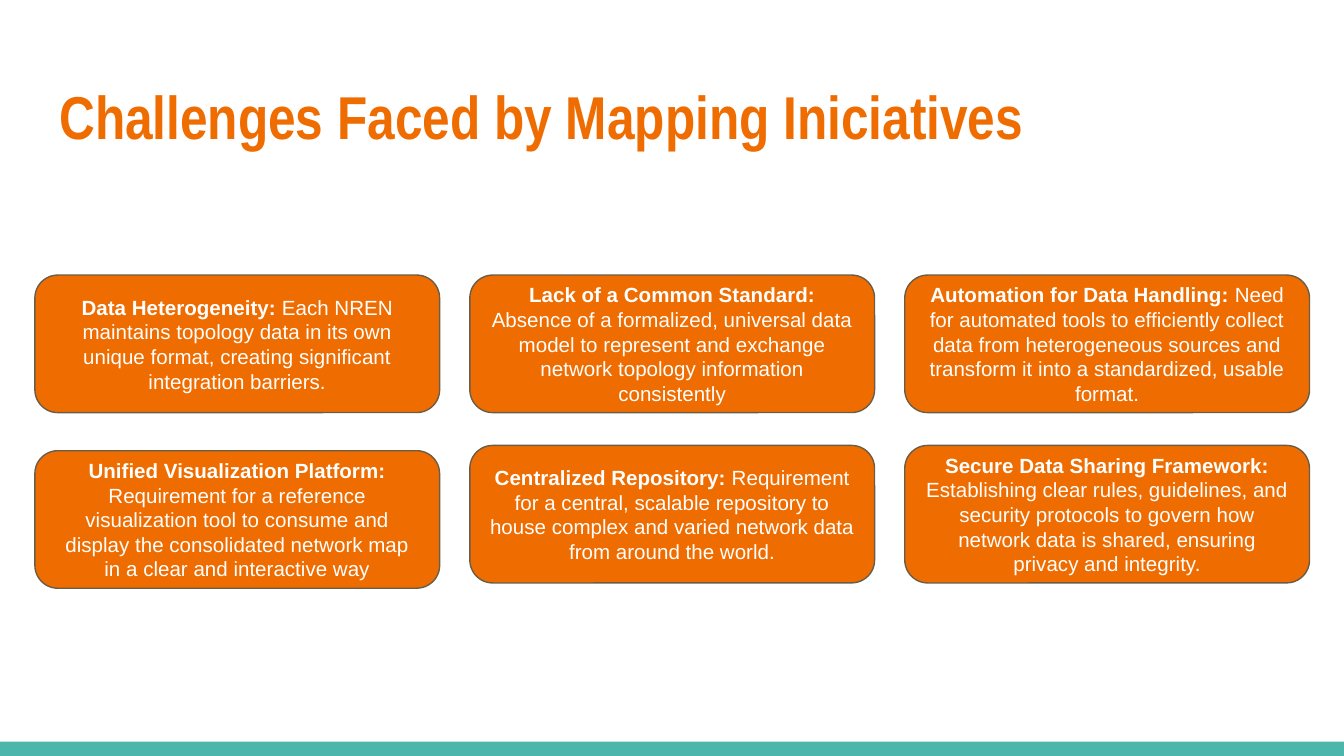
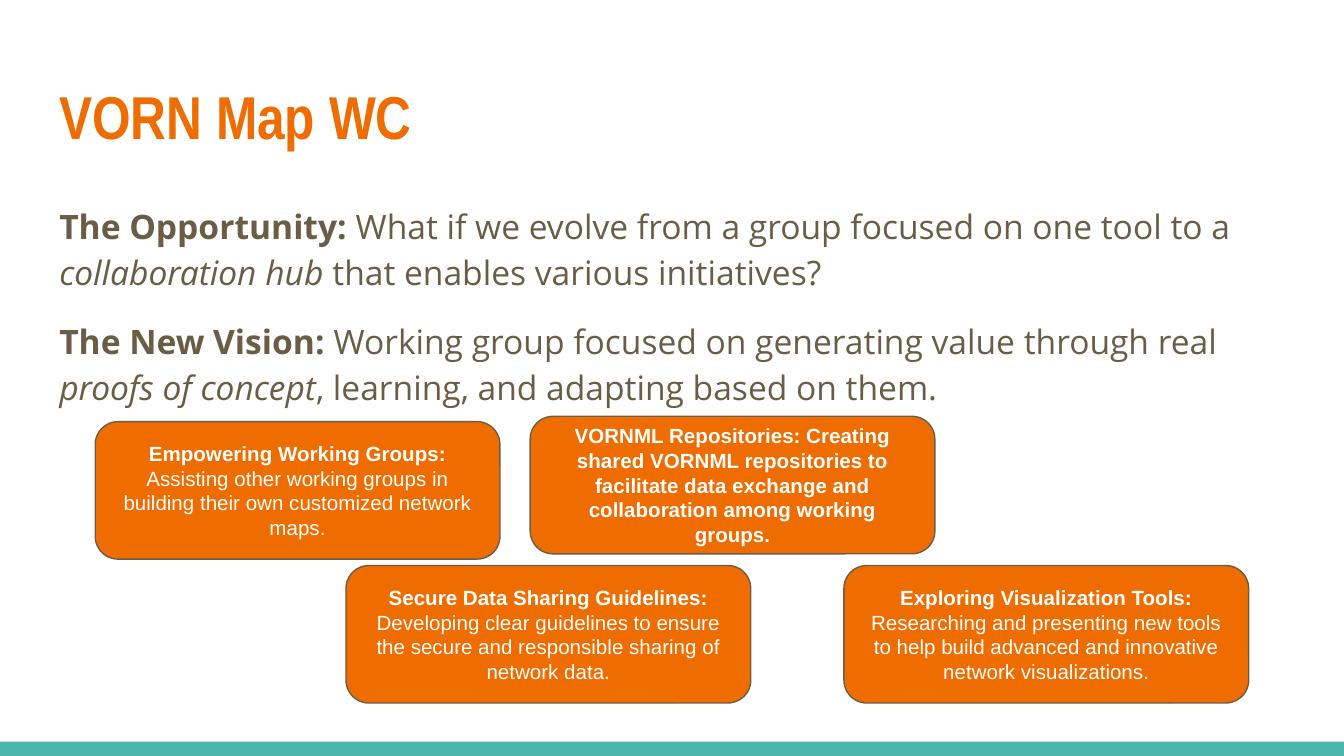
from typing import NamedTuple

from pptx import Presentation
from pptx.dml.color import RGBColor
from pptx.enum.shapes import MSO_SHAPE
from pptx.enum.text import MSO_ANCHOR, MSO_AUTO_SIZE, PP_ALIGN
from pptx.oxml.ns import qn
from pptx.util import Cm, Pt

ORANGE = RGBColor(0xEF, 0x6C, 0x00)
TEAL = RGBColor(0x4D, 0xB6, 0xAC)
BROWN = RGBColor(0x69, 0x5D, 0x46)
WHITE = RGBColor(0xFF, 0xFF, 0xFF)

TITLE_FONT = "Arial Narrow"
BODY_FONT = "Open Sans"
CARD_FONT = "Arial"

RECTANGLE = MSO_SHAPE.RECTANGLE
ROUNDED = MSO_SHAPE.ROUNDED_RECTANGLE
TOP = MSO_ANCHOR.TOP
MIDDLE = MSO_ANCHOR.MIDDLE
LEFT = PP_ALIGN.LEFT
CENTER = PP_ALIGN.CENTER
NO_AUTOFIT = MSO_AUTO_SIZE.NONE

SLIDE_WIDTH, SLIDE_HEIGHT = Cm(25.4), Cm(14.29)
BAND_HEIGHT = Cm(0.27)
INSET = Cm(0.25)
TEXT_LEFT, TEXT_WIDTH = Cm(0.87), Cm(23.67)
CARD_WIDTH, CARD_HEIGHT = Cm(7.65), Cm(2.6)
COLUMN_STEP = 8.22

TITLE_ONLY_LAYOUT = 5
TITLE_AND_BODY_LAYOUT = 1


class Run(NamedTuple):
    text: str
    bold: bool = False
    italic: bool = False


class Card(NamedTuple):
    """A rounded box; left and top are in centimetres."""
    left: float
    top: float
    heading: str
    detail: str = ""


CHALLENGE_LEFT = 0.66
CHALLENGE_ROWS = (5.2, 8.42)
LOWERED_TOP = 8.52
CHALLENGE_COLUMNS = [CHALLENGE_LEFT + COLUMN_STEP * column for column in range(3)]

CHALLENGES = [
    Card(CHALLENGE_COLUMNS[0], CHALLENGE_ROWS[0], "Data Heterogeneity:",
         " Each NREN maintains topology data in its own unique format, "
         "creating significant integration barriers."),
    Card(CHALLENGE_COLUMNS[1], CHALLENGE_ROWS[0], "Lack of a Common Standard:",
         " Absence of a formalized, universal data model to represent and "
         "exchange network topology information consistently"),
    Card(CHALLENGE_COLUMNS[2], CHALLENGE_ROWS[0], "Automation for Data Handling:",
         " Need for automated tools to efficiently collect data from heterogeneous "
         "sources and transform it into a standardized, usable format."),
    Card(CHALLENGE_COLUMNS[0], LOWERED_TOP, "Unified Visualization Platform:",
         " Requirement for a reference visualization tool to consume and display "
         "the consolidated network map in a clear and interactive way"),
    Card(CHALLENGE_COLUMNS[1], CHALLENGE_ROWS[1], "Centralized Repository:",
         " Requirement for a central, scalable repository to house complex and "
         "varied network data from around the world."),
    Card(CHALLENGE_COLUMNS[2], CHALLENGE_ROWS[1], "Secure Data Sharing Framework:",
         " Establishing clear rules, guidelines, and security protocols to govern "
         "how network data is shared, ensuring privacy and integrity."),
]

INITIATIVE_LEFT = 1.8
INITIATIVE_BOTTOM_ROW = 10.69

INITIATIVES = [
    Card(INITIATIVE_LEFT, 7.97, "Empowering Working Groups:",
         " Assisting other working groups in building their own customized "
         "network maps."),
    Card(INITIATIVE_LEFT + COLUMN_STEP, 7.87,
         "VORNML Repositories: Creating shared VORNML repositories to facilitate "
         "data exchange and collaboration among working groups."),
    Card(6.54, INITIATIVE_BOTTOM_ROW, "Secure Data Sharing Guidelines:",
         " Developing clear guidelines to ensure the secure and responsible "
         "sharing of network data."),
    Card(15.95, INITIATIVE_BOTTOM_ROW, "Exploring Visualization Tools:",
         " Researching and presenting new tools to help build advanced and "
         "innovative network visualizations."),
]

VISION = [
    [
        Run("The Opportunity:", bold=True),
        Run(" What if we evolve from a group focused on one tool to a "),
        Run("collaboration hub", italic=True),
        Run(" that enables various initiatives?"),
    ],
    [
        Run("The New Vision:", bold=True),
        Run(" Working group focused on generating value through real "),
        Run("proofs of concept", italic=True),
        Run(", learning, and adapting based on them."),
    ],
]


def write(shape, paragraphs: list[list[Run]], *, font: str, size: float,
          color: RGBColor, align=LEFT, anchor=TOP, line_spacing: float = 1.0,
          gap: float = 0) -> None:
    """Fill a shape with text; gap is the space between paragraphs in points."""
    frame = shape.text_frame
    frame.word_wrap = True
    frame.auto_size = NO_AUTOFIT
    frame.vertical_anchor = anchor
    frame.margin_left = frame.margin_right = INSET
    frame.margin_top = frame.margin_bottom = INSET
    for index, runs in enumerate(paragraphs):
        paragraph = frame.add_paragraph() if index else frame.paragraphs[0]
        paragraph.alignment = align
        paragraph.line_spacing = line_spacing
        paragraph.space_before = Pt(gap if index else 0)
        for text, bold, italic in runs:
            run = paragraph.add_run()
            run.text = text
            run.font.name = font
            run.font.size = Pt(size)
            run.font.bold = bold
            run.font.italic = italic
            run.font.color.rgb = color


def place(shape, left: int, top: int, width: int, height: int) -> None:
    shape.left, shape.top = left, top
    shape.width, shape.height = width, height


def remove_bullets(shape) -> None:
    for paragraph in shape.text_frame.paragraphs:
        properties = paragraph._p.get_or_add_pPr()
        properties.set("marL", "0")
        properties.set("indent", "0")
        properties.append(properties.makeelement(qn("a:buNone"), {}))


def add_master_band(presentation, slide) -> None:
    """Draw the bottom band and move it to the master, behind its placeholders."""
    band = slide.shapes.add_shape(RECTANGLE, 0, SLIDE_HEIGHT - BAND_HEIGHT,
                                  SLIDE_WIDTH, BAND_HEIGHT)
    band.shadow.inherit = False
    band.fill.solid()
    band.fill.fore_color.rgb = TEAL
    band.line.fill.background()
    presentation.slide_master.element.cSld.spTree.insert(2, band.element)


def add_titled_slide(presentation, layout: int, title: str):
    slide = presentation.slides.add_slide(presentation.slide_layouts[layout])
    place(slide.shapes.title, TEXT_LEFT, Cm(1.24), TEXT_WIDTH, Cm(1.96))
    write(slide.shapes.title, [[Run(title, bold=True)]],
          font=TITLE_FONT, size=32.4, color=ORANGE)
    return slide


def add_card(slide, card: Card) -> None:
    shape = slide.shapes.add_shape(ROUNDED, Cm(card.left), Cm(card.top),
                                   CARD_WIDTH, CARD_HEIGHT)
    shape.shadow.inherit = False
    shape.fill.solid()
    shape.fill.fore_color.rgb = ORANGE
    shape.line.color.rgb = BROWN
    shape.line.width = Pt(0.75)
    runs = [Run(card.heading, bold=True)]
    if card.detail:
        runs.append(Run(card.detail))
    write(shape, [runs], font=CARD_FONT, size=11, color=WHITE,
          align=CENTER, anchor=MIDDLE)


def build_challenges(presentation) -> None:
    slide = add_titled_slide(presentation, TITLE_ONLY_LAYOUT,
                             "Challenges Faced by Mapping Iniciatives")
    add_master_band(presentation, slide)
    for card in CHALLENGES:
        add_card(slide, card)


def build_vision(presentation) -> None:
    slide = add_titled_slide(presentation, TITLE_AND_BODY_LAYOUT, "VORN Map WC")
    body = slide.placeholders[1]
    place(body, TEXT_LEFT, Cm(3.52), TEXT_WIDTH, Cm(9.17))
    write(body, VISION, font=BODY_FONT, size=18, color=BROWN,
          line_spacing=1.15, gap=12)
    remove_bullets(body)
    for card in INITIATIVES:
        add_card(slide, card)


def main() -> None:
    presentation = Presentation()
    presentation.slide_width = SLIDE_WIDTH
    presentation.slide_height = SLIDE_HEIGHT
    build_challenges(presentation)
    build_vision(presentation)
    presentation.save("out.pptx")


if __name__ == "__main__":
    main()
